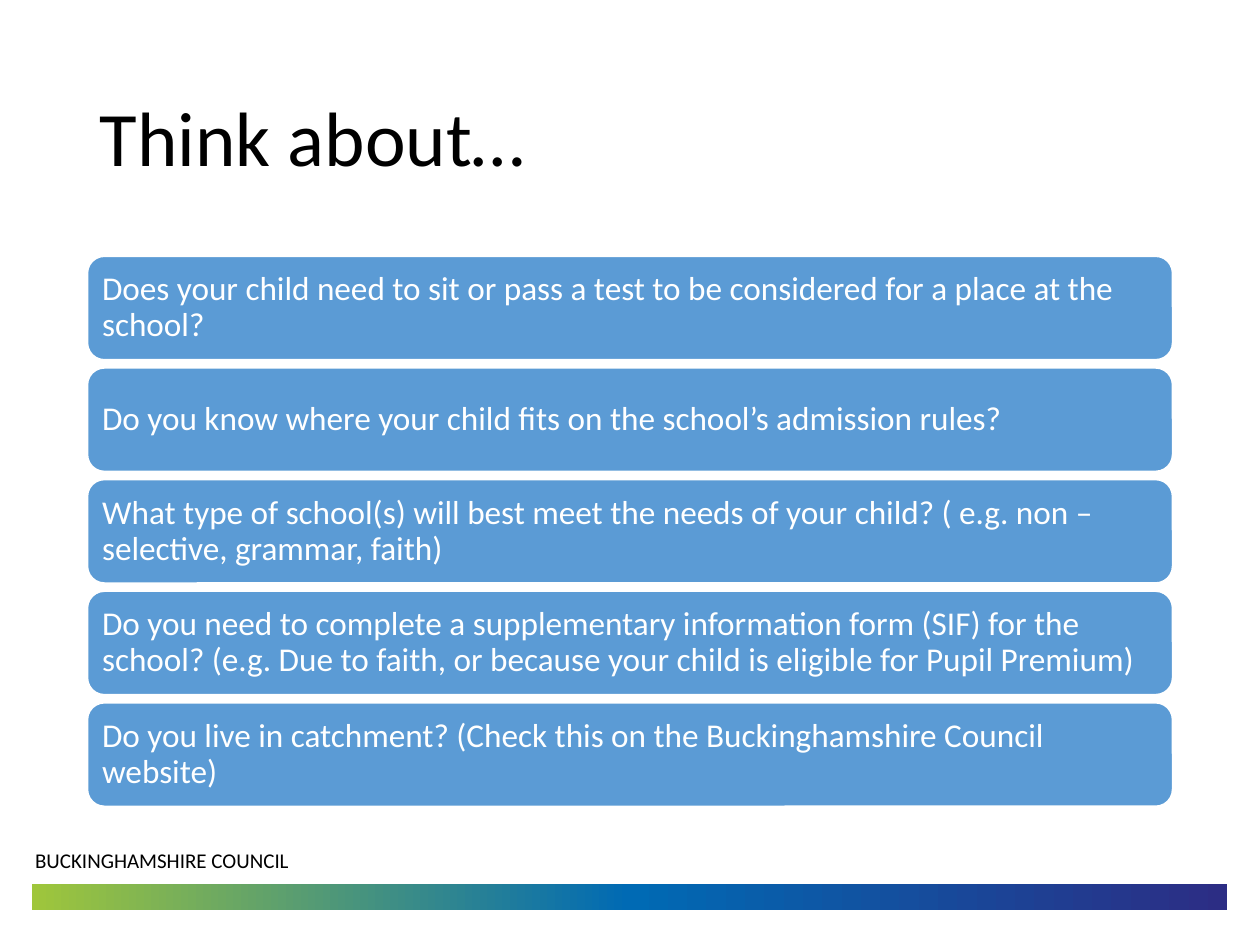
"""Build a slide of school admission questions for parents."""
from dataclasses import dataclass

from pptx import Presentation
from pptx import oxml
from pptx.dml.color import RGBColor
from pptx.enum import shapes, text
from pptx.oxml import ns
from pptx.util import Inches, Pt

BLACK = RGBColor(0x00, 0x00, 0x00)
WHITE = RGBColor(0xFF, 0xFF, 0xFF)
BLUE = RGBColor(0x5B, 0x9B, 0xD5)
LIME = RGBColor(0x9F, 0xC6, 0x3B)
AZURE = RGBColor(0x00, 0x6A, 0xB4)
NAVY = RGBColor(0x2C, 0x2D, 0x84)
FONT = "Calibri"
LEFT, WIDTH = 0.69, 8.62
TOP, STEP, HEIGHT = 2.03, 0.886, 0.83
ASKS = [
    "Does your child need to sit or pass a test to be considered for a place at the school?",
    "Do you know where your child fits on the school’s admission rules?",
    "What type of school(s) will best meet the needs of your child? ( e.g. non –selective, grammar, faith)",
    "Do you need to complete a supplementary information form (SIF) for the school? "
    "(e.g. Due to faith, or because your child is eligible for Pupil Premium)",
    "Do you live in catchment? (Check this on the Buckinghamshire Council website)",
]


@dataclass
class Box:
    left: float
    top: float
    width: float
    height: float

    def args(self) -> list:
        return [Inches(n) for n in (self.left, self.top, self.width, self.height)]


def write(frame, words: str, size: int, color: RGBColor, space: float = 1.0) -> None:
    """Set one left-aligned paragraph and its font."""
    frame.text = words
    frame.word_wrap = True
    para = frame.paragraphs[0]
    para.alignment = text.PP_ALIGN.LEFT
    para.line_spacing = space
    font = para.runs[0].font
    font.name, font.size, font.color.rgb = FONT, Pt(size), color


def add_band(slide, box: Box, colors: list[RGBColor]) -> None:
    """Draw a bar shaded evenly through the colours from left to right."""
    band = slide.shapes.add_shape(shapes.MSO_SHAPE.RECTANGLE, *box.args())
    band.shadow.inherit = False
    stops = "".join(
        f'<a:gs pos="{100000 * i // (len(colors) - 1)}"><a:srgbClr val="{color}"/></a:gs>'
        for i, color in enumerate(colors)
    )
    fill = oxml.parse_xml(
        f'<a:gradFill {ns.nsdecls("a")}><a:gsLst>{stops}</a:gsLst><a:lin ang="0"/></a:gradFill>'
    )
    band.element.spPr.find(ns.qn("a:prstGeom")).addnext(fill)
    band.line.fill.background()


def add_card(slide, box: Box, words: str) -> None:
    """Draw a rounded card with one question."""
    card = slide.shapes.add_shape(shapes.MSO_SHAPE.ROUNDED_RECTANGLE, *box.args())
    card.shadow.inherit = False
    card.fill.solid()
    card.fill.fore_color.rgb = BLUE
    card.line.color.rgb = WHITE
    card.line.width = Pt(1.5)
    frame = card.text_frame
    frame.margin_left = frame.margin_right = Inches(0.08)
    frame.margin_top = frame.margin_bottom = Inches(0.08)
    frame.vertical_anchor = text.MSO_ANCHOR.MIDDLE
    write(frame, words, 19, WHITE, 0.9)


def main() -> None:
    """Build and save the slide."""
    deck = Presentation()
    deck.slide_width, deck.slide_height = Inches(10), Inches(7.5)
    slide = deck.slides.add_slide(deck.slide_layouts[5])

    add_band(slide, Box(0.25, 7.02, 9.49, 0.2), [LIME, AZURE, NAVY])
    label = slide.shapes.add_textbox(*Box(0.18, 6.68, 4.81, 0.3).args())
    write(label.text_frame, "BUCKINGHAMSHIRE COUNCIL", 12, BLACK)

    title = slide.shapes.title
    title.left, title.top, title.width, title.height = Box(LEFT, 0.4, WIDTH, 1.45).args()
    title.text_frame.vertical_anchor = text.MSO_ANCHOR.MIDDLE
    write(title.text_frame, "Think about…", 44, BLACK, 0.9)

    for i, ask in enumerate(ASKS):
        add_card(slide, Box(LEFT, TOP + i * STEP, WIDTH, HEIGHT), ask)
    deck.save("out.pptx")


if __name__ == "__main__":
    main()
